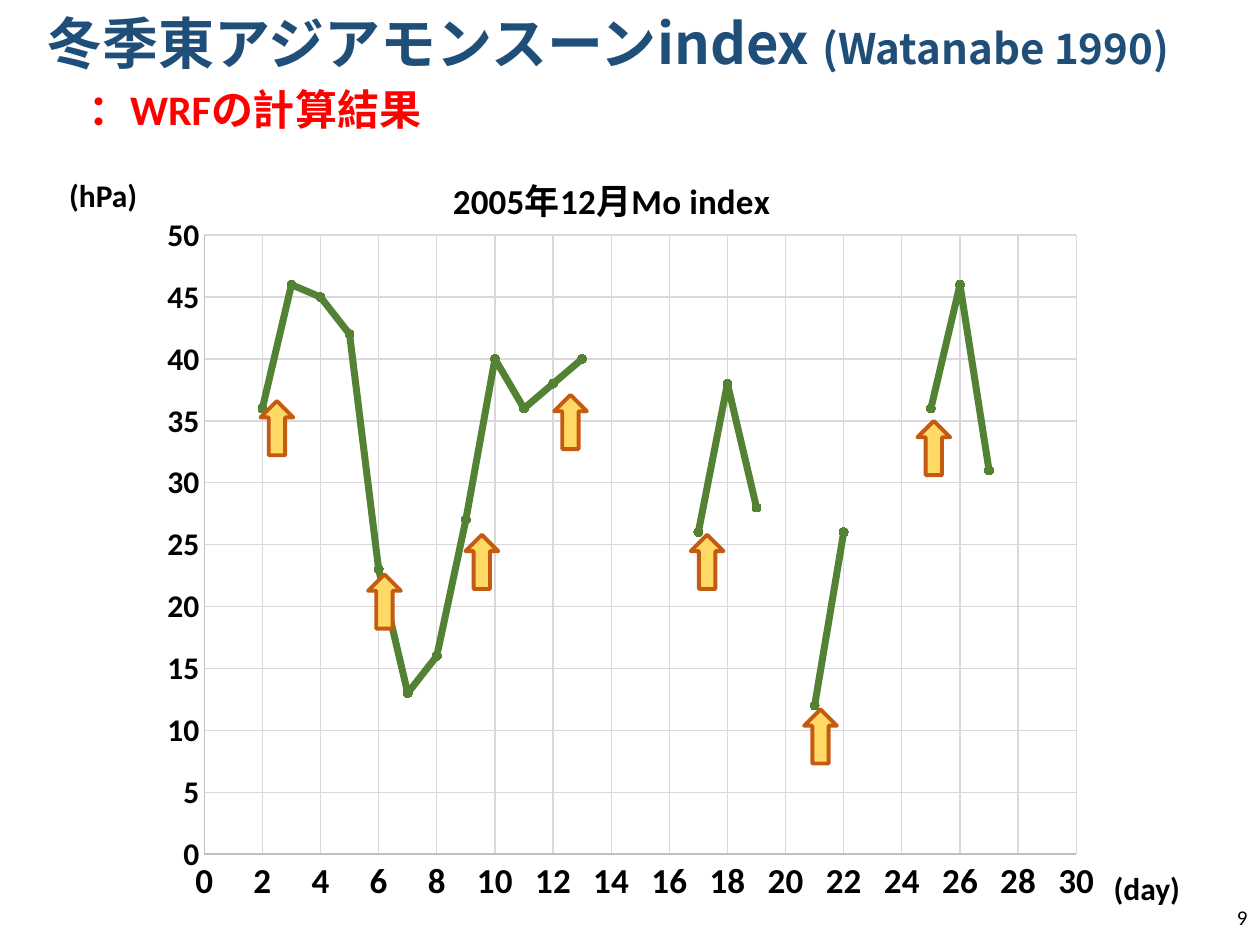
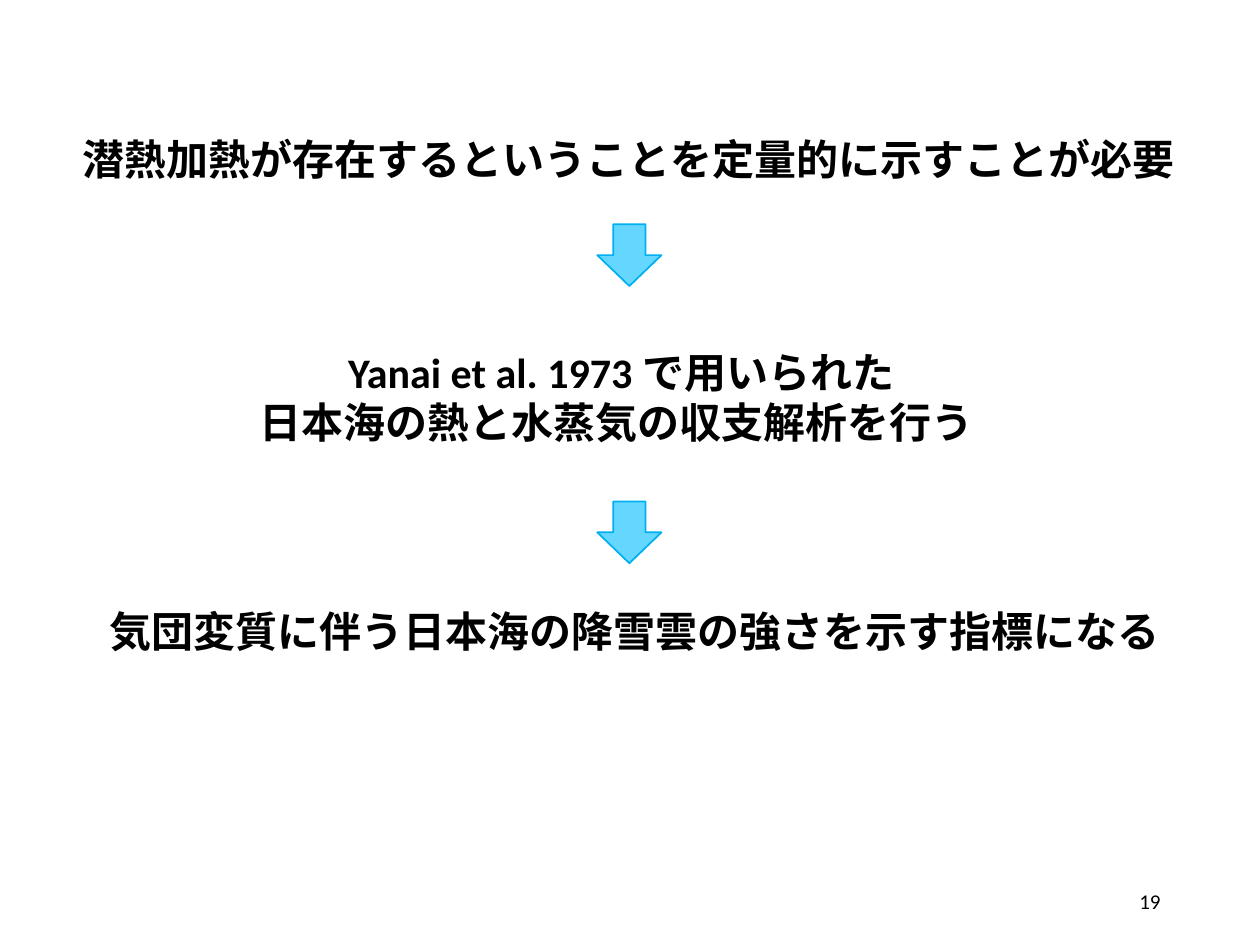
from dataclasses import dataclass

from lxml import etree
from pptx import Presentation
from pptx import util as u
from pptx.chart.data import XyChartData
from pptx.dml.color import RGBColor
from pptx.enum import chart as charts, shapes, text
from pptx.oxml.ns import qn

# Shared look
LATIN, JAPANESE = "Calibri", "Noto Sans CJK JP"
BLACK, NAVY, RED = "000000", "1F4E79", "FF0000"
GREEN, AXIS_GREY, GRID_GREY = "548235", "BFBFBF", "D9D9D9"
ORANGE_ARROW = ("FFD966", "C55A11", 2.25)
BLUE_ARROW = ("65D7FF", "00B0F0", 1)
LEFT, CENTER, RIGHT = text.PP_ALIGN.LEFT, text.PP_ALIGN.CENTER, text.PP_ALIGN.RIGHT

# Monsoon index by day, from day 1
MO_INDEX = [None, 36, 46, 45, 42, 23, 13, 16, 27, 40, 36, 38, 40, None, None, None,
            26, 38, 28, None, 12, 26, None, None, 36, 46, 31]
LAST_DAY, TOP_INDEX = 30, 50
# Arrow tips as (day, index)
ONSETS = [(2.5, 36.6), (6.2, 22.6), (9.55, 25.8), (12.6, 37.1),
          (17.3, 25.8), (21.2, 11.7), (25.1, 35)]


@dataclass
class Box:
    """A rectangle in inches."""
    left: float
    top: float
    width: float
    height: float

    def share(self, left, top, width, height):
        """The box that takes the given shares of this one."""
        return Box(self.left + left * self.width, self.top + top * self.height,
                   width * self.width, height * self.height)

    def lengths(self):
        return [u.Inches(n) for n in (self.left, self.top, self.width, self.height)]


PAGE = Box(0, 0, 10, 7.5)


def cells(left, top, width, height):
    """A box on the page grid of 100 columns and 75 rows."""
    return PAGE.share(left / 100, top / 75, width / 100, height / 75)


def color(value):
    return RGBColor.from_string(value)


def format_font(font, size, fill=BLACK, bold=True, latin=LATIN):
    font.size, font.bold, font.name = u.Pt(size), bold, latin
    font.color.rgb = color(fill)


def set_japanese_font(run):
    east_asian = etree.Element(qn("a:ea"))
    east_asian.set("typeface", JAPANESE)
    run._r.get_or_add_rPr().find(qn("a:latin")).addnext(east_asian)


def write(shape, *lines, align=LEFT, anchor=text.MSO_ANCHOR.TOP, **font_format):
    """Fill a shape; a line is a string or a list of (string, own format)."""
    frame = shape.text_frame
    frame.word_wrap, frame.auto_size = True, text.MSO_AUTO_SIZE.NONE
    frame.vertical_anchor = anchor
    for number, line in enumerate(lines):
        paragraph = frame.add_paragraph() if number else frame.paragraphs[0]
        paragraph.alignment = align
        for words, own in [(line, {})] if isinstance(line, str) else line:
            run = paragraph.add_run()
            run.text = words
            format_font(run.font, **{**font_format, **own})
            set_japanese_font(run)


def add_text(slide, box, *lines, **options):
    write(slide.shapes.add_textbox(*box.lengths()), *lines, **options)


def set_title(slide, box, line, **options):
    title = slide.shapes.title
    title.left, title.top, title.width, title.height = box.lengths()
    write(title, line, **options)


def add_page_number(slide, box, number):
    add_text(slide, box, number, size=12, bold=False, align=RIGHT,
             anchor=text.MSO_ANCHOR.MIDDLE)


def add_arrow(slide, kind, box, style):
    fill, line, width = style
    arrow = slide.shapes.add_shape(kind, *box.lengths())
    arrow.shadow.inherit = False
    arrow.fill.solid()
    arrow.fill.fore_color.rgb = color(fill)
    arrow.line.color.rgb = color(line)
    arrow.line.width = u.Pt(width)


def make_layout(parent, **settings):
    """Make a fixed place for a chart element, in shares of the chart."""
    for old in parent.findall(qn("c:layout")):
        parent.remove(old)
    layout = etree.Element(qn("c:layout"))
    manual = etree.SubElement(layout, qn("c:manualLayout"))
    for name, value in settings.items():
        etree.SubElement(manual, qn("c:" + name)).set("val", str(value))
    return layout


def format_axis(axis, size, maximum, step):
    axis.minimum_scale, axis.maximum_scale, axis.major_unit = 0, maximum, step
    axis.major_tick_mark = axis.minor_tick_mark = charts.XL_TICK_MARK.NONE
    axis.has_major_gridlines = True
    for line, fill in ((axis.format.line, AXIS_GREY),
                       (axis.major_gridlines.format.line, GRID_GREY)):
        line.color.rgb = color(fill)
        line.width = u.Pt(0.75)
    format_font(axis.tick_labels.font, size)


def add_index_chart(slide, box, plot_shares):
    data = XyChartData()
    points = data.add_series("Series 1")
    for day, value in enumerate(MO_INDEX, 1):
        points.add_data_point(day, value)
    chart = slide.shapes.add_chart(charts.XL_CHART_TYPE.XY_SCATTER_LINES,
                                   *box.lengths(), data).chart
    # Days without a value leave a gap in the line
    for point in chart.element.xpath(".//c:yVal//c:pt"):
        if point.find(qn("c:v")).text in ("None", "", None):
            point.getparent().remove(point)

    chart.has_legend = False
    chart.font.size, chart.font.name = u.Pt(10), LATIN
    format_axis(chart.category_axis, 20, LAST_DAY, 2)
    format_axis(chart.value_axis, 18, TOP_INDEX, 5)
    chart.plots[0].vary_by_categories = False

    # Line and markers
    series = chart.plots[0].series[0]
    series.smooth = False
    series.format.line.color.rgb = color(GREEN)
    series.format.line.width = u.Pt(4)
    series.marker.style, series.marker.size = charts.XL_MARKER_STYLE.CIRCLE, 5
    series.marker.format.fill.solid()
    series.marker.format.fill.fore_color.rgb = color(GREEN)
    series.marker.format.line.color.rgb = color(GREEN)

    # Chart title and plot area
    run = chart.chart_title.text_frame.paragraphs[0].add_run()
    run.text = "2005年12月Mo index"
    format_font(run.font, 20)
    set_japanese_font(run)
    title = chart.element.find(".//" + qn("c:title"))
    title.find(qn("c:tx")).addnext(
        make_layout(title, xMode="edge", yMode="edge", x=0.31, y=0.06))
    plot_area = chart.element.find(".//" + qn("c:plotArea"))
    left, top, width, height = plot_shares
    plot_area.insert(0, make_layout(plot_area, layoutTarget="inner", xMode="edge",
                                    yMode="edge", x=left, y=top, w=width, h=height))


def add_onset_arrows(slide, plot):
    width, height = 0.26, 0.43
    for day, value in ONSETS:
        tip = plot.share(day / LAST_DAY, 1 - value / TOP_INDEX, 0, 0)
        add_arrow(slide, shapes.MSO_SHAPE.UP_ARROW,
                  Box(tip.left - width / 2, tip.top, width, height), ORANGE_ARROW)


def build_index_slide(slide):
    set_title(slide, cells(2.7, 0.2, 94.6, 6.4),
              [("冬季東アジアモンスーンindex ", {}), ("(Watanabe 1990)", {"size": 24})],
              size=32, fill=NAVY, latin=JAPANESE)
    chart_box = cells(11.6, 9.1, 76.9, 63.8)
    plot_shares = (0.06, 0.15, 0.9, 0.77)
    add_index_chart(slide, chart_box, plot_shares)
    add_onset_arrows(slide, chart_box.share(*plot_shares))
    # Axis units
    add_text(slide, cells(4.5, 13.5, 8.1, 4), "(hPa)", size=18)
    add_text(slide, cells(87.4, 68.5, 8.1, 4), "(day)", size=18)
    add_text(slide, cells(6, 6.1, 90.2, 5), "：WRFの計算結果", size=24, fill=RED)
    add_page_number(slide, cells(77.5, 70.8, 22.5, 4), "9")


def build_reasoning_slide(slide):
    statement = {"size": 24, "align": CENTER}
    set_title(slide, cells(0.5, 10.1, 98.8, 5),
              "潜熱加熱が存在するということを定量的に示すことが必要", **statement)
    add_text(slide, cells(18.8, 27, 61, 9.1), "Yanai et al. 1973 で用いられた",
             "日本海の熱と水蒸気の収支解析を行う ", **statement)
    add_text(slide, cells(4.4, 47.6, 91.1, 5),
             " 気団変質に伴う日本海の降雪雲の強さを示す指標になる", **statement)
    # Arrows between the statements
    for row in (17.8, 39.8):
        add_arrow(slide, shapes.MSO_SHAPE.DOWN_ARROW, cells(47.4, row, 5.1, 4.9), BLUE_ARROW)
    add_page_number(slide, cells(70.6, 69.5, 22.5, 4), "19")


def main():
    presentation = Presentation()
    presentation.slide_width = u.Inches(PAGE.width)
    presentation.slide_height = u.Inches(PAGE.height)
    title_only = presentation.slide_layouts[5]
    for build in (build_index_slide, build_reasoning_slide):
        build(presentation.slides.add_slide(title_only))
    presentation.save("out.pptx")


if __name__ == "__main__":
    main()
